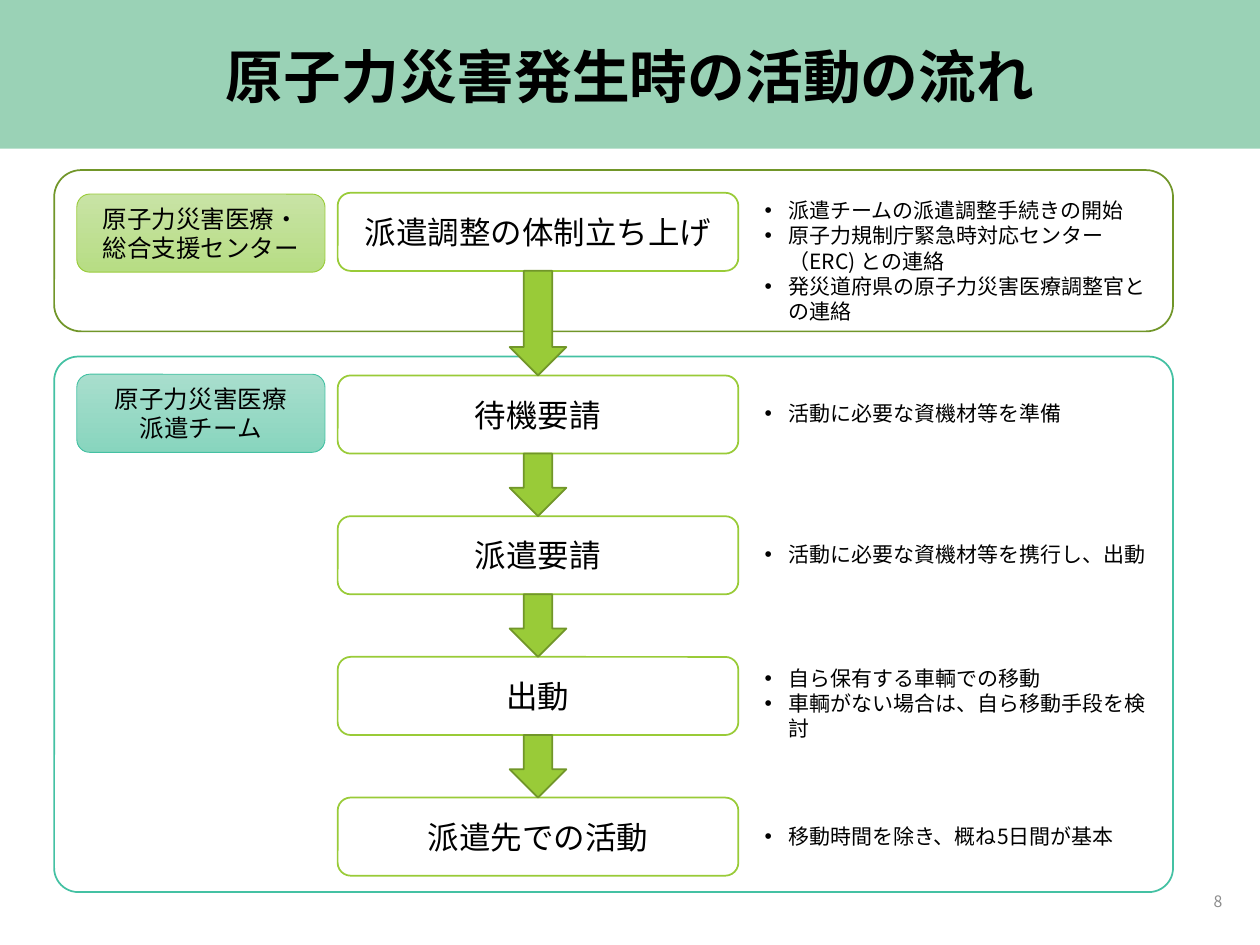
import pptx
import pptx.util
import pptx.dml.color
import pptx.enum.shapes
import pptx.enum.text
import pptx.oxml.ns
from lxml import etree

Inches, Pt = pptx.util.Inches, pptx.util.Pt
SHAPES = pptx.enum.shapes.MSO_SHAPE
ALIGN = pptx.enum.text.PP_ALIGN
ANCHOR = pptx.enum.text.MSO_ANCHOR
qn = pptx.oxml.ns.qn

# Content
FONT = "Noto Sans CJK JP"
TITLE = "原子力災害発生時の活動の流れ"
PAGE_NUMBER = "8"
GREEN, DARK_GREEN, TEAL = "99CB38", "719629", "44C1A3"

# Step label, top of its notes, height of its notes, notes
STEPS = [
    ("派遣調整の体制立ち上げ", 1.52, 1.11, [
        "派遣チームの派遣調整手続きの開始",
        "原子力規制庁緊急時対応センター（ERC) との連絡",
        "発災道府県の原子力災害医療調整官との連絡"]),
    ("待機要請", 3.13, 0.3, ["活動に必要な資機材等を準備"]),
    ("派遣要請", 4.25, 0.3, ["活動に必要な資機材等を携行し、出動"]),
    ("出動", 5.23, 0.71, [
        "自ら保有する車輌での移動",
        "車輌がない場合は、自ら移動手段を検討"]),
    ("派遣先での活動", 6.49, 0.3, ["移動時間を除き、概ね5日間が基本"]),
]
# Frame top, frame height, corner, frame line, label top, label lines,
# label gradient, label line
GROUPS = [
    (1.35, 1.28, 0.167, DARK_GREEN, 1.54,
     ["原子力災害医療・総合支援センター"], ("C8E3A5", "B7DD84"), GREEN),
    (2.83, 4.25, 0.045, TEAL, 2.97,
     ["原子力災害医療", "派遣チーム"], ("A8DECD", "88D5BE"), TEAL),
]

# Layout
STEP_LEFT, STEP_WIDTH, STEP_HEIGHT = 2.68, 3.18, 0.62
FIRST_TOP, SECOND_TOP, LAST_TOP = 1.53, 2.98, 6.33
PITCH = (LAST_TOP - SECOND_TOP) / (len(STEPS) - 2)
STEP_TOPS = [FIRST_TOP] + [SECOND_TOP + PITCH * i for i in range(len(STEPS) - 1)]
ARROW_WIDTH = 0.45
NOTE_INDENT = 0.19


def rgb(color):
    return pptx.dml.color.RGBColor.from_string(color)


def add_shape(slide, kind, box, fill=None, line=None, line_width=1):
    shape = slide.shapes.add_shape(kind, *map(Inches, box))
    shape.shadow.inherit = False
    if fill:
        shape.fill.solid()
        shape.fill.fore_color.rgb = rgb(fill)
    else:
        shape.fill.background()
    if line:
        shape.line.color.rgb = rgb(line)
        shape.line.width = Pt(line_width)
    else:
        shape.line.fill.background()
    return shape


def write(shape, lines, size, align=ALIGN.CENTER, anchor=ANCHOR.MIDDLE,
          color="000000", bold=False, bullets=False, spacing=None):
    frame = shape.text_frame
    frame.word_wrap = True
    frame.vertical_anchor = anchor
    for index, line in enumerate(lines):
        paragraph = frame.add_paragraph() if index else frame.paragraphs[0]
        paragraph.alignment = align
        if spacing:
            paragraph.line_spacing = spacing
        if bullets:
            properties = paragraph._p.get_or_add_pPr()
            properties.set("marL", str(Inches(NOTE_INDENT)))
            properties.set("indent", str(-Inches(NOTE_INDENT)))
            etree.SubElement(properties, qn("a:buFont"), typeface="Arial")
            etree.SubElement(properties, qn("a:buChar"), char="•")
        run = paragraph.add_run()
        run.text = line
        run.font.size = Pt(size)
        run.font.bold = bold
        run.font.color.rgb = rgb(color)
        run.font.name = FONT
        # East Asian characters take their own font setting
        etree.SubElement(run._r.get_or_add_rPr(), qn("a:ea"), typeface=FONT)


def add_text(slide, box, lines, size, **options):
    write(slide.shapes.add_textbox(*map(Inches, box)), lines, size, **options)


def main():
    presentation = pptx.Presentation()
    presentation.slide_width, presentation.slide_height = Inches(10), Inches(7.5)
    slide = presentation.slides.add_slide(presentation.slide_layouts[6])

    # Half-transparent title band
    band = add_shape(slide, SHAPES.RECTANGLE, (0, 0, 10, 1.18), "37A76F")
    band_color = band._element.spPr.find(qn("a:solidFill"))[0]
    etree.SubElement(band_color, qn("a:alpha"), val="50000")
    add_text(slide, (0.69, 0.21, 8.62, 0.85), [TITLE], 33, bold=True, spacing=0.9)

    # Frames and their labels
    for top, height, corner, line, label_top, label, gradient, label_line in GROUPS:
        frame = add_shape(slide, SHAPES.ROUNDED_RECTANGLE,
                          (0.43, top, 8.88, height), line=line)
        frame.adjustments[0] = corner
        tag = add_shape(slide, SHAPES.ROUNDED_RECTANGLE,
                        (0.61, label_top, 1.97, 0.62), line=label_line, line_width=0.5)
        tag.fill.gradient()
        tag.fill.gradient_angle = 270
        for stop, color, position in zip(tag.fill.gradient_stops, gradient, (0, 1)):
            stop.color.rgb = rgb(color)
            stop.position = position
        write(tag, label, 14)

    # Steps with their notes
    for top, (label, note_top, note_height, notes) in zip(STEP_TOPS, STEPS):
        step = add_shape(slide, SHAPES.ROUNDED_RECTANGLE,
                         (STEP_LEFT, top, STEP_WIDTH, STEP_HEIGHT), "FFFFFF", GREEN)
        write(step, [label], 18)
        add_text(slide, (5.97, note_top, 3.34, note_height), notes, 12,
                 align=ALIGN.LEFT, anchor=ANCHOR.TOP, bullets=True)

    # Arrows fill the gaps between steps
    arrow_left = STEP_LEFT + (STEP_WIDTH - ARROW_WIDTH) / 2
    for top, next_top in zip(STEP_TOPS, STEP_TOPS[1:]):
        start = top + STEP_HEIGHT
        add_shape(slide, SHAPES.DOWN_ARROW,
                  (arrow_left, start, ARROW_WIDTH, next_top - start), GREEN, DARK_GREEN)

    # Page number
    add_text(slide, (7.55, 6.95, 2.25, 0.4), [PAGE_NUMBER], 9,
             align=ALIGN.RIGHT, color="8C8C8C")

    presentation.save("out.pptx")


if __name__ == "__main__":
    main()
